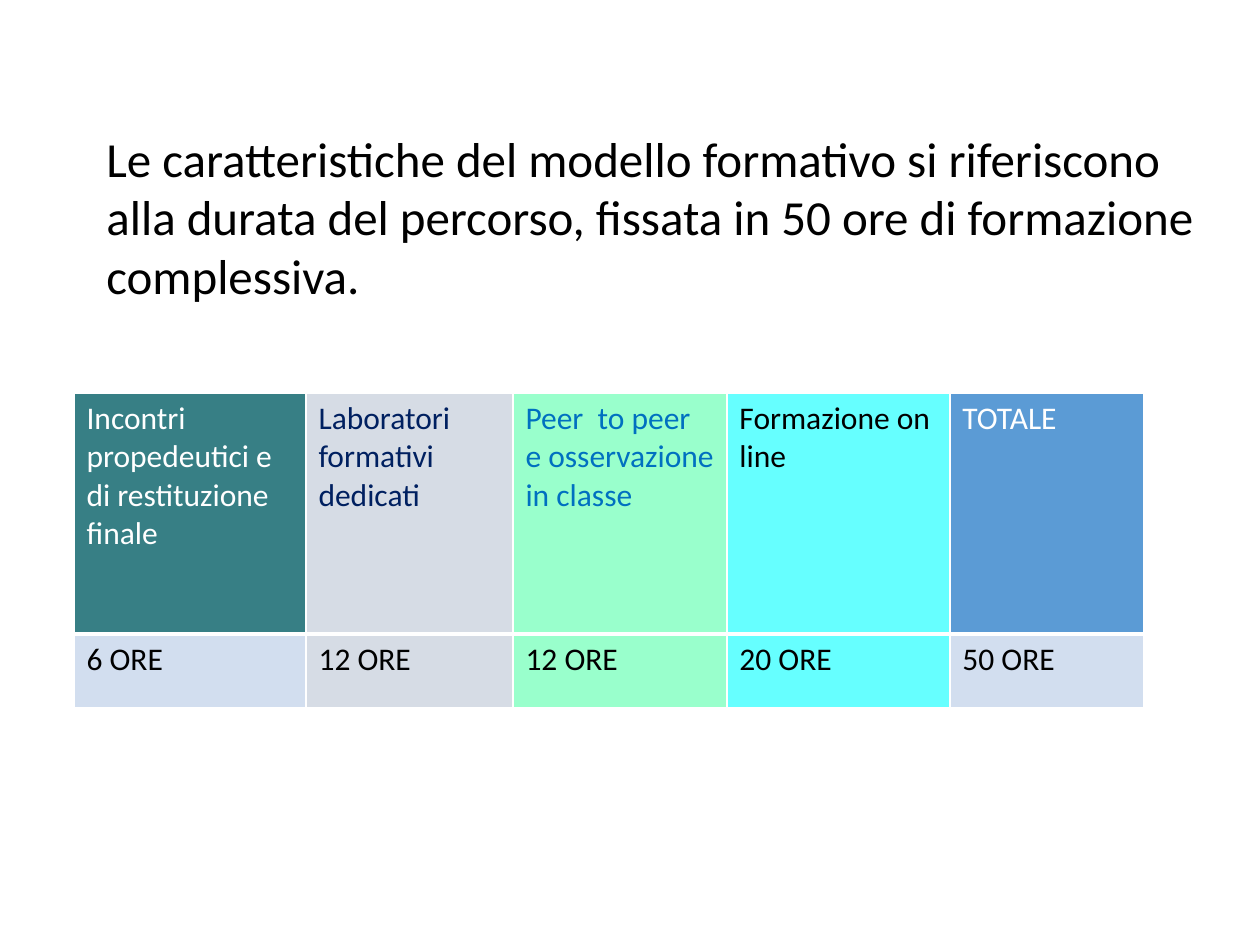
from lxml.etree import SubElement
from pptx import Presentation
from pptx.dml.color import RGBColor
from pptx.oxml.ns import qn
from pptx.util import Emu, Inches, Pt

COLORS = {
    "white": "FFFFFF",
    "black": "000000",
    "teal": "377F85",
    "navy": "002060",
    "grey": "D6DCE5",
    "azure": "0070C0",
    "mint": "99FFCC",
    "cyan": "66FFFF",
    "blue": "5B9BD5",
    "pale": "D2DEEF",
}

COLUMNS = [
    (232, "Incontri propedeutici e di restituzione finale", "6 ORE", "white", "teal", "pale"),
    (207, "Laboratori formativi dedicati", "12 ORE", "navy", "grey", "grey"),
    (214, "Peer  to peer\ne osservazione in classe", "12 ORE", "azure", "mint", "mint"),
    (223, "Formazione on line", "20 ORE", "black", "cyan", "cyan"),
    (194, "TOTALE", "50 ORE", "white", "blue", "pale"),
]
ROW_HEIGHTS = [241, 74]


class SlideBuilder:
    FONT = "Calibri"
    SCALE = Inches(1) / 126

    def __init__(self, page):
        self.page = page

    def px(self, length):
        return Emu(round(length * self.SCALE))

    def style(self, frame, size, color):
        for para in frame.paragraphs:
            for span in para.runs:
                span.font.name = self.FONT
                span.font.size = Pt(size)
                span.font.color.rgb = RGBColor.from_string(COLORS[color])

    def text(self, left, top, width, height, words, size, color, inset_top):
        box = self.page.shapes.add_textbox(*map(self.px, (left, top, width, height)))
        frame = box.text_frame
        frame.word_wrap = True
        frame.margin_top = self.px(inset_top)
        frame.text = words
        self.style(frame, size, color)

    def borders(self, cell, color, bottom):
        properties = cell._tc.get_or_add_tcPr()
        for side, points in (("L", 1), ("R", 1), ("T", 1), ("B", bottom)):
            line = SubElement(properties, qn(f"a:ln{side}"), w=str(Pt(points)))
            fill = SubElement(line, qn("a:solidFill"))
            SubElement(fill, qn("a:srgbClr"), val=COLORS[color])

    def cell(self, cell, words, size, color, fill, bottom):
        cell.text_frame.text = words
        self.style(cell.text_frame, size, color)
        self.borders(cell, "white", bottom)
        cell.fill.solid()
        cell.fill.fore_color.rgb = RGBColor.from_string(COLORS[fill])

    def hours_table(self, left, top, columns, heights, size):
        width = sum(column[0] for column in columns)
        area = map(self.px, (left, top, width, sum(heights)))
        table = self.page.shapes.add_table(len(heights), len(columns), *area).table
        for row, height in zip(table.rows, heights):
            row.height = self.px(height)
        for index, (width, title, hours, color, head_fill, hours_fill) in enumerate(columns):
            table.columns[index].width = self.px(width)
            self.cell(table.cell(0, index), title, size, color, head_fill, 3)
            self.cell(table.cell(1, index), hours, size, "black", hours_fill, 1)


def main():
    deck = Presentation()
    deck.slide_width = Inches(10)
    deck.slide_height = Inches(7.5)
    builder = SlideBuilder(deck.slides.add_slide(deck.slide_layouts[6]))
    builder.hours_table(74, 393, COLUMNS, ROW_HEIGHTS, 18)
    builder.text(
        94, 68, 1126, 420,
        "Le caratteristiche del modello formativo si riferiscono alla durata "
        "del percorso, fissata in 50 ore di formazione complessiva.",
        28, "black", 60,
    )
    deck.save("out.pptx")


if __name__ == "__main__":
    main()
